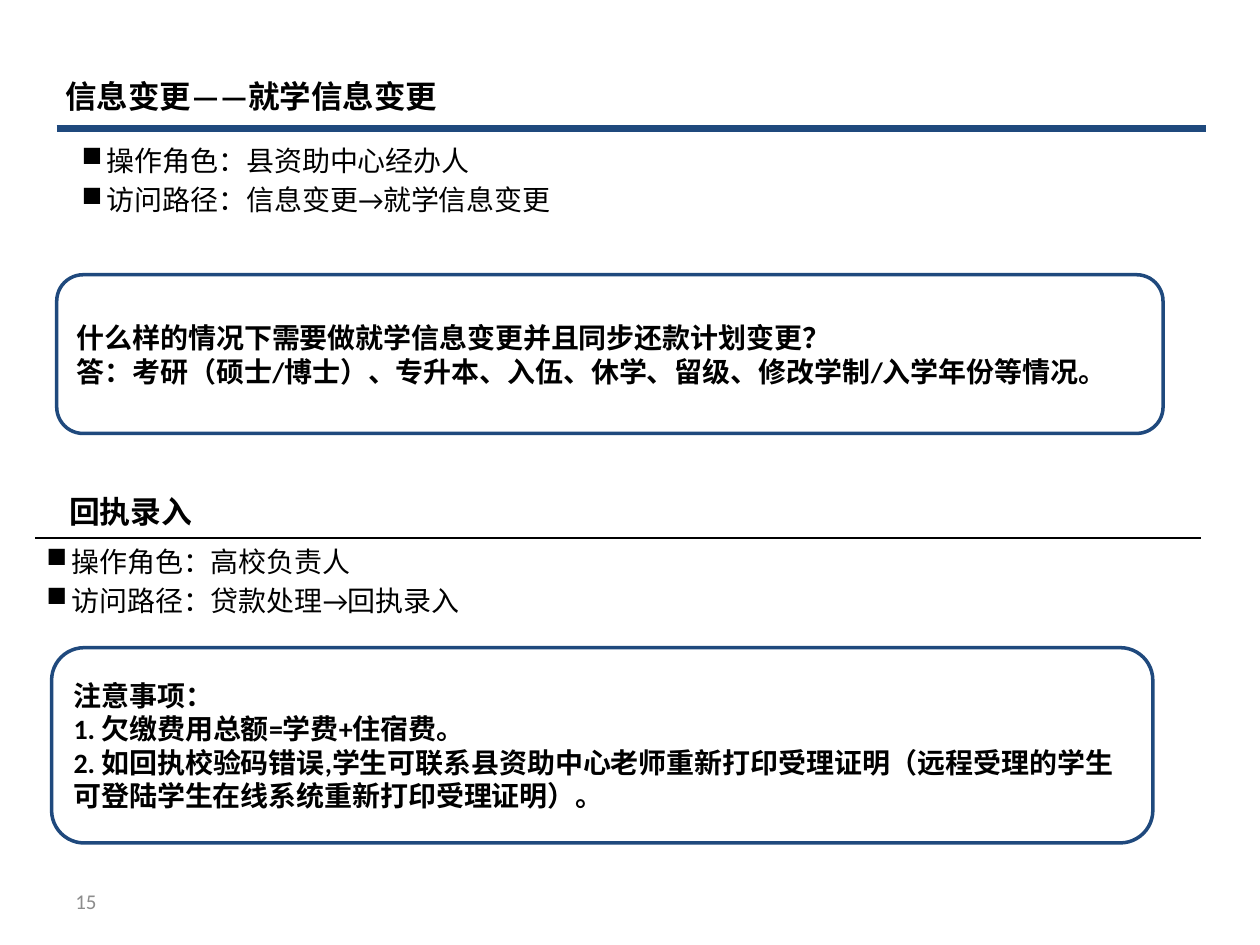
import dataclasses

import lxml.etree
import pptx
import pptx.dml.color
import pptx.enum.shapes
import pptx.enum.text
import pptx.oxml.ns
import pptx.util

Pt = pptx.util.Pt
ANCHOR = pptx.enum.text.MSO_ANCHOR
qn = pptx.oxml.ns.qn


@dataclasses.dataclass(frozen=True)
class Theme:
    navy: str = "1F497D"
    black: str = "000000"
    white: str = "FFFFFF"
    grey: str = "8C8C8C"
    title_font: str = "Arial"
    body_font: str = "Calibri"
    bullet_font: str = "Noto Sans CJK SC"
    east_asian_font: str = "Calibri"
    title_size: float = 18
    subtitle_size: float = 17.6
    body_size: float = 16
    number_size: float = 12
    bullet_indent: float = 14.4
    bullet_gap: float = 3.2


def rgb(code):
    return pptx.dml.color.RGBColor.from_string(code)


class SlideBuilder:
    def __init__(self, slide, theme):
        self.slide = slide
        self.theme = theme

    def add_run(self, paragraph, text, size, font, color, bold=False):
        run = paragraph.add_run()
        run.text = text
        run.font.size = Pt(size)
        run.font.name = font
        run.font.bold = bold
        run.font.color.rgb = rgb(color)
        latin = run.font._element.find(qn("a:latin"))
        east_asian = lxml.etree.Element(qn("a:ea"), typeface=self.theme.east_asian_font)
        latin.addnext(east_asian)

    def fill_text(self, frame, lines, size, font, color=None, bold=False,
                  anchor=ANCHOR.MIDDLE, bulleted=False):
        """Fill a text frame with one left-aligned paragraph per line."""
        frame.word_wrap = True
        frame.auto_size = pptx.enum.text.MSO_AUTO_SIZE.NONE
        frame.vertical_anchor = anchor
        for index, line in enumerate(lines):
            paragraph = frame.add_paragraph() if index else frame.paragraphs[0]
            paragraph.alignment = pptx.enum.text.PP_ALIGN.LEFT
            if bulleted:
                self.mark_bullet(paragraph)
                if index:
                    paragraph.space_before = Pt(self.theme.bullet_gap)
            self.add_run(paragraph, line, size, font, color or self.theme.black, bold)

    def mark_bullet(self, paragraph):
        properties = paragraph._p.get_or_add_pPr()
        indent = Pt(self.theme.bullet_indent)
        properties.set("marL", str(indent))
        properties.set("indent", str(-indent))
        lxml.etree.SubElement(properties, qn("a:buChar"), char="■")

    def title(self, text, left, top, width, height):
        heading = self.slide.shapes.title
        heading.left, heading.top = Pt(left), Pt(top)
        heading.width, heading.height = Pt(width), Pt(height)
        self.fill_text(heading.text_frame, [text], self.theme.title_size,
                       self.theme.title_font, bold=True)

    def label(self, text, left, top, width, height, size, **style):
        box = self.slide.shapes.add_textbox(Pt(left), Pt(top), Pt(width), Pt(height))
        self.fill_text(box.text_frame, [text], size, self.theme.body_font, **style)

    def bullets(self, lines, left, top, width, height):
        box = self.slide.shapes.add_textbox(Pt(left), Pt(top), Pt(width), Pt(height))
        self.fill_text(box.text_frame, lines, self.theme.body_size,
                       self.theme.bullet_font, anchor=ANCHOR.TOP, bulleted=True)

    def callout(self, lines, left, top, width, height):
        panel = self.slide.shapes.add_shape(
            pptx.enum.shapes.MSO_SHAPE.FLOWCHART_ALTERNATE_PROCESS,
            Pt(left), Pt(top), Pt(width), Pt(height))
        panel.shadow.inherit = False
        panel.fill.solid()
        panel.fill.fore_color.rgb = rgb(self.theme.white)
        panel.line.color.rgb = rgb(self.theme.navy)
        panel.line.width = Pt(2)
        panel.text_frame.margin_top = panel.text_frame.margin_bottom = 0
        self.fill_text(panel.text_frame, lines, self.theme.body_size,
                       self.theme.body_font, bold=True)

    def rule(self, left, right, y, color, weight):
        line = self.slide.shapes.add_connector(
            pptx.enum.shapes.MSO_CONNECTOR.STRAIGHT, Pt(left), Pt(y), Pt(right), Pt(y))
        line.line.color.rgb = rgb(color)
        line.line.width = Pt(weight)
        lxml.etree.SubElement(line._element.spPr, qn("a:effectLst"))


def main():
    deck = pptx.Presentation()
    deck.slide_width, deck.slide_height = Pt(720), Pt(540)
    theme = Theme()
    title_only = deck.slide_layouts[5]
    page = SlideBuilder(deck.slides.add_slide(title_only), theme)

    page.rule(32.4, 689, 73.4, theme.navy, 4)
    page.title("信息变更——就学信息变更", 30.2, 40.3, 648, 29.5)
    page.bullets(["操作角色：县资助中心经办人", "访问路径：信息变更→就学信息变更"],
                 39.6, 78.5, 646.6, 50.4)
    page.callout(["什么样的情况下需要做就学信息变更并且同步还款计划变更？",
                  "答：考研（硕士/博士）、专升本、入伍、休学、留级、修改学制/入学年份等情况。"],
                 32.4, 157, 632.2, 90.7)

    page.label("回执录入", 32.4, 277.2, 648, 29.5, theme.subtitle_size, bold=True)
    page.rule(20.2, 686.2, 307.4, theme.black, 0.75)
    page.bullets(["操作角色：高校负责人", "访问路径：贷款处理→回执录入"],
                 19.4, 307.4, 646.6, 48.2)
    page.callout(["注意事项：",
                  "1. 欠缴费用总额=学费+住宿费。",
                  "2. 如回执校验码错误,学生可联系县资助中心老师重新打印受理证明"
                  "（远程受理的学生可登陆学生在线系统重新打印受理证明）。"],
                 29.5, 370.1, 629.3, 111.6)

    page.label("15", 36, 500.4, 167.8, 28.8, theme.number_size, color=theme.grey)
    deck.save("out.pptx")


if __name__ == "__main__":
    main()
